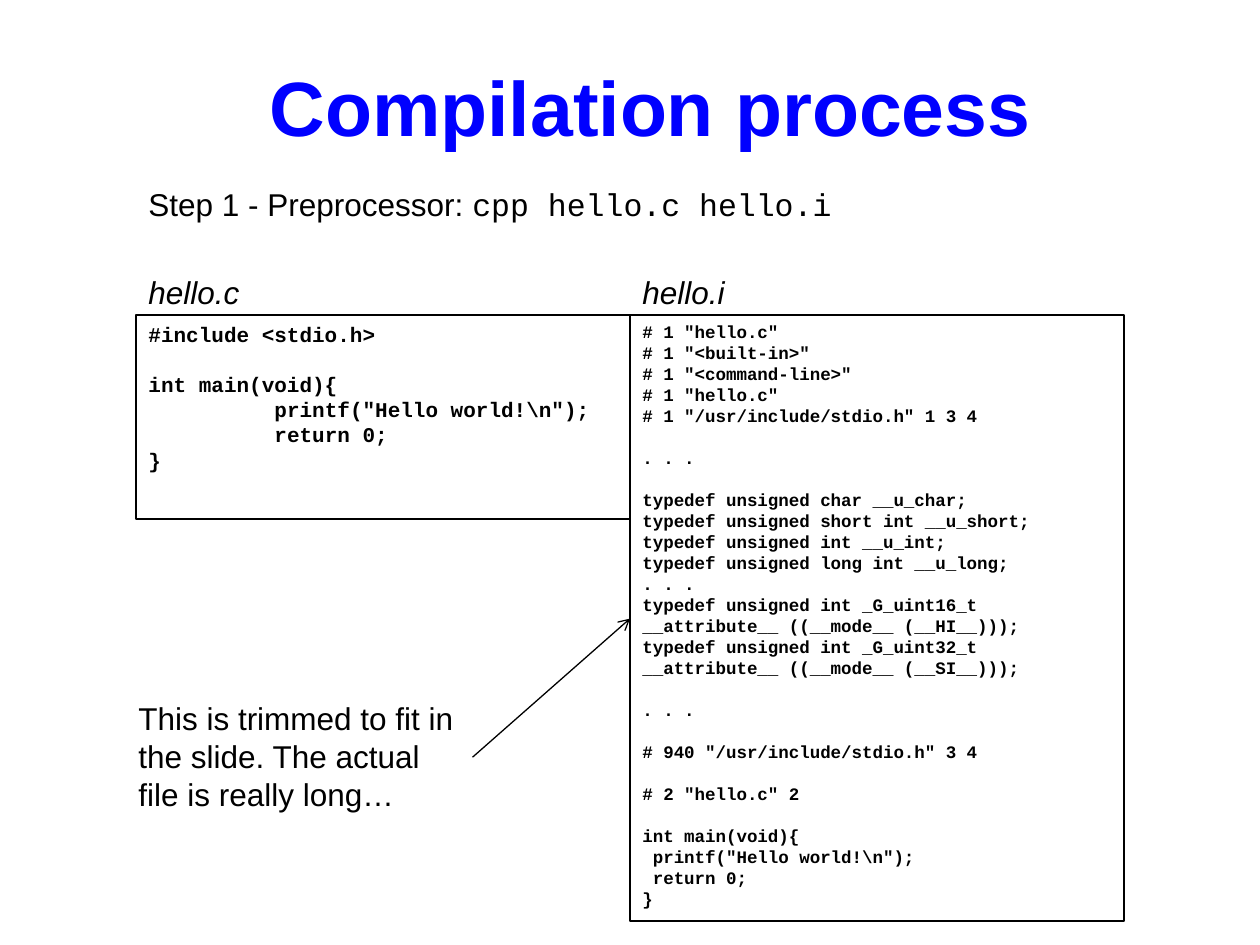
"""Build the slide on the preprocessing step of compilation."""
from dataclasses import dataclass, field

from lxml.etree import SubElement
from pptx import Presentation
from pptx.dml.color import RGBColor
from pptx.enum.shapes import MSO_CONNECTOR, MSO_SHAPE
from pptx.enum.text import MSO_ANCHOR, PP_ALIGN
from pptx.oxml.ns import qn
from pptx.util import Inches, Pt

BLACK = RGBColor(0, 0, 0)
WHITE = RGBColor(255, 255, 255)
BLUE = RGBColor(0, 0, 255)
SANS = "Arial"
MONO = "Courier New"
LINE_HEIGHT = 1.2
COLUMN_WIDTH = 3.92
PANEL_LEFT = 1.08
CODE_TOP = 2.5

HELLO_C = r"""#include <stdio.h>

int main(void){
	printf("Hello world!\n");
	return 0;
}"""

HELLO_I = r"""# 1 "hello.c"
# 1 "<built-in>"
# 1 "<command-line>"
# 1 "hello.c"
# 1 "/usr/include/stdio.h" 1 3 4

. . .

typedef unsigned char __u_char;
typedef unsigned short int __u_short;
typedef unsigned int __u_int;
typedef unsigned long int __u_long;
. . .
typedef unsigned int _G_uint16_t __attribute__ ((__mode__ (__HI__)));
typedef unsigned int _G_uint32_t __attribute__ ((__mode__ (__SI__)));

. . .

# 940 "/usr/include/stdio.h" 3 4

# 2 "hello.c" 2

int main(void){
 printf("Hello world!\n");
 return 0;
}"""


@dataclass
class Run:
    text: str
    format: dict = field(default_factory=dict)


@dataclass
class Line:
    runs: list[Run]
    space_before: float = 0
    tab: float = 1


@dataclass
class Block:
    left: float
    top: float
    width: float
    height: float
    size: float
    lines: list[Line]
    format: dict = field(default_factory=dict)
    fill: RGBColor | None = None
    outline: RGBColor | None = None
    margin_left: float = 0.1


def code_lines(source: str, size: float) -> list[Line]:
    lines, gap = [], 0
    for text in source.splitlines():
        if text:
            lines.append(Line([Run(text)], gap))
            gap = 0
        else:
            gap += size * LINE_HEIGHT
    return lines


def code_block(column: int, height: float, size: float, source: str) -> Block:
    return Block(PANEL_LEFT + column * COLUMN_WIDTH, CODE_TOP, COLUMN_WIDTH, height, size,
                 code_lines(source, size), {"name": MONO, "bold": True}, outline=BLACK)


def add_line(paragraph, line: Line, block: Block) -> None:
    settings = {"alignment": PP_ALIGN.LEFT, "line_spacing": Pt(block.size * LINE_HEIGHT),
                "space_before": Pt(line.space_before)}
    for name, value in settings.items():
        setattr(paragraph, name, value)
    if any("\t" in run.text for run in line.runs):
        tabs = SubElement(paragraph._p.get_or_add_pPr(), qn("a:tabLst"))
        SubElement(tabs, qn("a:tab"), pos=str(Inches(line.tab)), algn="l")
    for item in line.runs:
        run = paragraph.add_run()
        run.text = item.text
        values = {"name": SANS, "size": Pt(block.size), "color": BLACK} | block.format | item.format
        run.font.color.rgb = values.pop("color")
        for name, value in values.items():
            setattr(run.font, name, value)


def add_block(slide, block: Block) -> None:
    frame = [Inches(value) for value in (block.left, block.top, block.width, block.height)]
    if block.fill or block.outline:
        shape = slide.shapes.add_shape(MSO_SHAPE.RECTANGLE, *frame)
        shape.shadow.inherit = False
    else:
        shape = slide.shapes.add_textbox(*frame)
    if block.fill:
        shape.fill.solid()
        shape.fill.fore_color.rgb = block.fill
    else:
        shape.fill.background()
    if block.outline:
        shape.line.color.rgb = block.outline
        shape.line.width = Pt(0.75)
    else:
        shape.line.fill.background()
    text_frame = shape.text_frame
    settings = {"word_wrap": True, "vertical_anchor": MSO_ANCHOR.TOP,
                "margin_left": Inches(block.margin_left)}
    for name, value in settings.items():
        setattr(text_frame, name, value)
    for index, line in enumerate(block.lines):
        paragraph = text_frame.add_paragraph() if index else text_frame.paragraphs[0]
        add_line(paragraph, line, block)


def add_arrow(slide, start: tuple[float, float], end: tuple[float, float]) -> None:
    points = [Inches(value) for value in (*start, *end)]
    arrow = slide.shapes.add_connector(MSO_CONNECTOR.STRAIGHT, *points)
    arrow.line.color.rgb = BLACK
    arrow.line.width = Pt(0.75)
    SubElement(arrow.line._get_or_add_ln(), qn("a:tailEnd"), type="arrow")
    SubElement(arrow._element.spPr, qn("a:effectLst"))


def main() -> None:
    presentation = Presentation()
    presentation.slide_width = Inches(10)
    presentation.slide_height = Inches(7.5)
    slide = presentation.slides.add_slide(presentation.slide_layouts[6])
    step = Line([Run("Step 1 - Preprocessor: "), Run("cpp hello.c hello.i", {"name": MONO})])
    file_names = Line([Run("hello.c\thello.i", {"italic": True})], 28.8, COLUMN_WIDTH)
    note = "This is trimmed to fit in the slide. The actual file is really long…"
    blocks = [
        Block(PANEL_LEFT, 1.42, 8.33, 5.92, 18, [step, file_names], fill=WHITE),
        Block(1.83, 0.42, 6.54, 0.84, 44, [Line([Run("Compilation process")])],
              {"bold": True, "color": BLUE}, margin_left=0.31),
        code_block(1, 4.81, 10, HELLO_I),
        code_block(0, 1.62, 12, HELLO_C),
        Block(1, 5.5, 2.75, 1.01, 18, [Line([Run(note)])]),
    ]
    for block in blocks:
        add_block(slide, block)
    add_arrow(slide, (3.75, 6.01), (5, 4.91))
    presentation.save("out.pptx")


if __name__ == "__main__":
    main()
